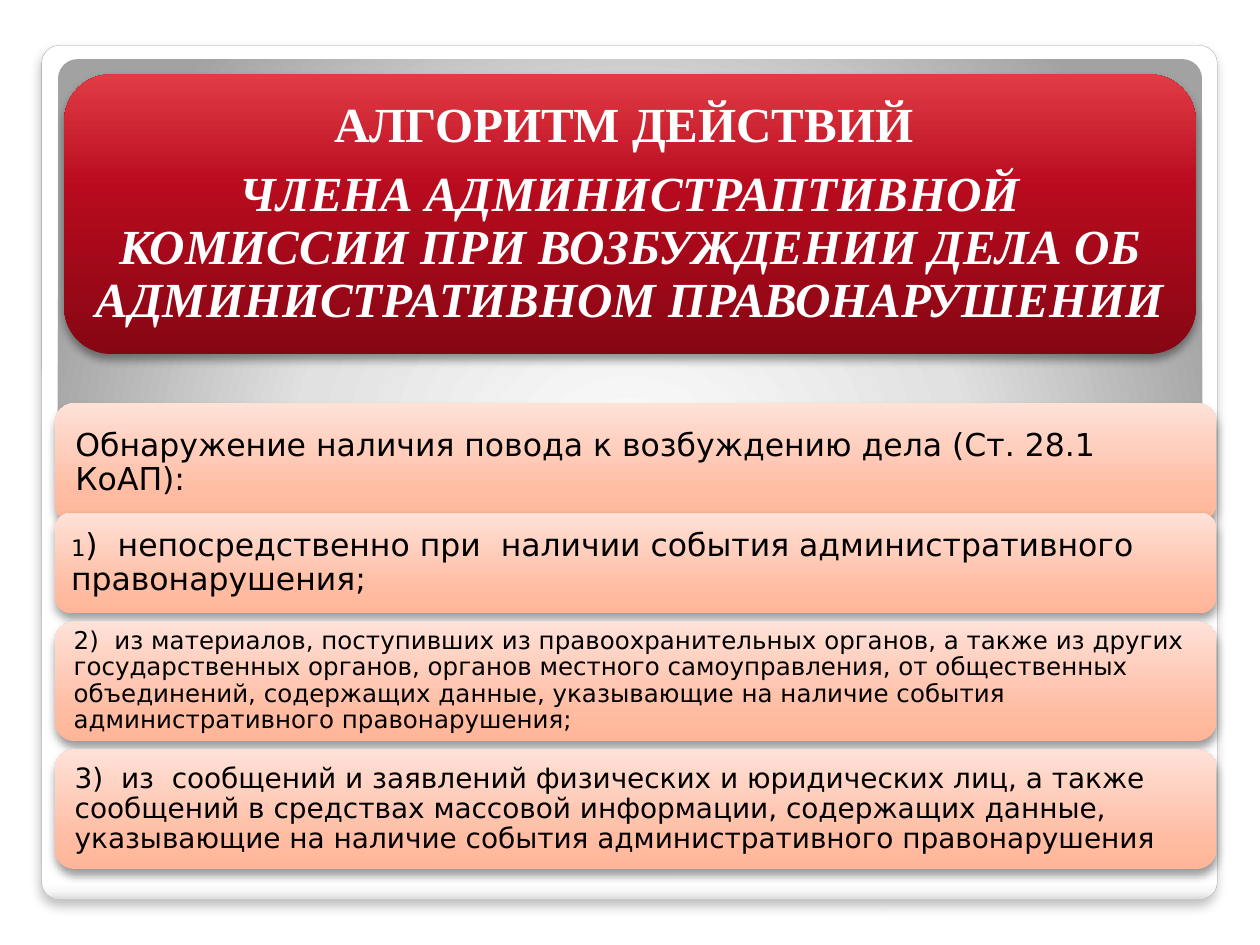
"""Build the slide on the steps of opening an administrative case."""
from lxml import etree
from pptx import Presentation
from pptx.dml.color import RGBColor
from pptx.enum.shapes import MSO_SHAPE
from pptx.enum.text import MSO_ANCHOR, MSO_AUTO_SIZE, PP_ALIGN
from pptx.oxml.ns import qn
from pptx.util import Pt

ROUND = MSO_SHAPE.ROUNDED_RECTANGLE
MIDDLE = MSO_ANCHOR.MIDDLE
FIXED = MSO_AUTO_SIZE.NONE
LEFT, CENTER = PP_ALIGN.LEFT, PP_ALIGN.CENTER

COLORS = {
    "white": "FFFFFF", "black": "000000", "edge": "A4A4A4",
    "pale": "F7F7F7", "rim": "DADADA", "mist": "E1E1E1", "gray": "A2A2A2",
    "wine": "870614", "red": "B80B1E", "rose": "E13C45",
    "peach": "FFB598", "coral": "FFBCA2", "cream": "FFE1D8",
}
FRAME = [(0, "white"), (98, "white"), (99, "pale"), (100, "rim")]
GLOW = [(0, "white"), (55, "mist"), (100, "gray")]
REDS = [(0, "wine"), (60, "red"), (100, "rose")]
WARM = [(0, "peach"), (25, "coral"), (100, "cream")]
SOFT, DEEP = (25, 6, 4), (40, 5.2, 3)


def add_box(box, stops, angle=None, shade=None, round_by=None):
    shape = slide.shapes.add_shape(ROUND, *map(Pt, box))
    if round_by:
        shape.adjustments[0] = round_by
    shape.line.fill.background()
    shape.shadow.inherit = False
    shape.fill.gradient()
    props = shape._element.spPr
    grad = props.find(qn("a:gradFill"))
    for child in list(grad):
        grad.remove(child)
    group = etree.SubElement(grad, qn("a:gsLst"))
    for place, name in stops:
        stop = etree.SubElement(group, qn("a:gs"), pos=str(place * 1000))
        etree.SubElement(stop, qn("a:srgbClr"), val=COLORS[name])
    if angle is None:
        way = etree.SubElement(grad, qn("a:path"), path="circle")
        etree.SubElement(way, qn("a:fillToRect"), l="50000", t="175000", r="50000", b="-75000")
    else:
        etree.SubElement(grad, qn("a:lin"), ang=str(angle * 60000), scaled="0")
    if shade:
        alpha, blur, drop = shade
        cast = etree.SubElement(
            props.find(qn("a:effectLst")), qn("a:outerShdw"), blurRad=str(Pt(blur)),
            dist=str(Pt(drop)), dir="5400000", algn="t", rotWithShape="0")
        tint = etree.SubElement(cast, qn("a:srgbClr"), val=COLORS["black"])
        etree.SubElement(tint, qn("a:alpha"), val=str(alpha * 1000))
    return shape


def set_text(shape, inset, lines, color, align, after=0, **font):
    frame = shape.text_frame
    margin = Pt(inset)
    form = {"word_wrap": True, "auto_size": FIXED, "vertical_anchor": MIDDLE,
            "margin_left": margin, "margin_right": margin,
            "margin_top": margin, "margin_bottom": margin}
    for key, value in form.items():
        setattr(frame, key, value)
    for index, runs in enumerate(lines):
        para = frame.add_paragraph() if index else frame.paragraphs[0]
        layout = {"alignment": align, "line_spacing": 0.9,
                  "space_before": Pt(0), "space_after": Pt(after)}
        for key, value in layout.items():
            setattr(para, key, value)
        for text, size, slant in runs:
            run = para.add_run()
            run.text = text
            for key, value in {"size": Pt(size), "italic": slant, **font}.items():
                setattr(run.font, key, value)
            run.font.color.rgb = RGBColor.from_string(COLORS[color])


deck = Presentation()
deck.slide_width, deck.slide_height = Pt(720), Pt(540)
slide = deck.slides.add_slide(deck.slide_layouts[5])

card = add_box((23.8, 25.9, 671.8, 488.2), FRAME, 90, SOFT, 0.021)
card.line.color.rgb = RGBColor.from_string(COLORS["edge"])
card.line.width = Pt(0.16)
add_box((33.1, 33.8, 653.8, 244.8), GLOW, round_by=0.046)
add_box((36.7, 42.5, 646.6, 159.8), REDS, 270, DEEP)

title = slide.shapes.title
slide.shapes._spTree.append(title._element)
for key, value in {"left": 44.6, "top": 50.4, "width": 630.7, "height": 144}.items():
    setattr(title, key, Pt(value))
set_text(title, 8.6, [
    [("АЛГОРИТМ ДЕЙСТВИЙ ", 28, False)],
    [("ЧЛЕНА АДМИНИСТРАПТИВНОЙ КОМИССИИ ПРИ ВОЗБУЖДЕНИИ ДЕЛА ОБ "
      "АДМИНИСТРАТИВНОМ ПРАВОНАРУШЕНИИ", 28, True)],
], "white", CENTER, after=9, name="Times New Roman", bold=True)

STEPS = [
    (230.4, 68.4, 8.6, [("Обнаружение наличия повода к возбуждению дела (Ст. 28.1 КоАП):", 18, False)]),
    (293, 57.6, 6.6, [("1", 13, False), (
        ")  непосредственно при  наличии события административного правонарушения;", 18, False)]),
    (355.1, 68.4, 7.6, [(
        "2)  из материалов, поступивших из правоохранительных органов, а также из других "
        "государственных органов, органов местного самоуправления, от общественных "
        "объединений, содержащих данные, указывающие на наличие события "
        "административного правонарушения;", 14, False)]),
    (428.2, 68.4, 8.2, [(
        "3)  из  сообщений и заявлений физических и юридических лиц, а также "
        "сообщений в средствах массовой информации, содержащих данные, "
        "указывающие на наличие события административного правонарушения", 16, False)]),
]
for top, height, inset, runs in STEPS:
    step = add_box((31.2, top, 664, height), WARM, 270, DEEP)
    set_text(step, inset, [runs], "black", LEFT, name="DejaVu Sans")

deck.save("out.pptx")
